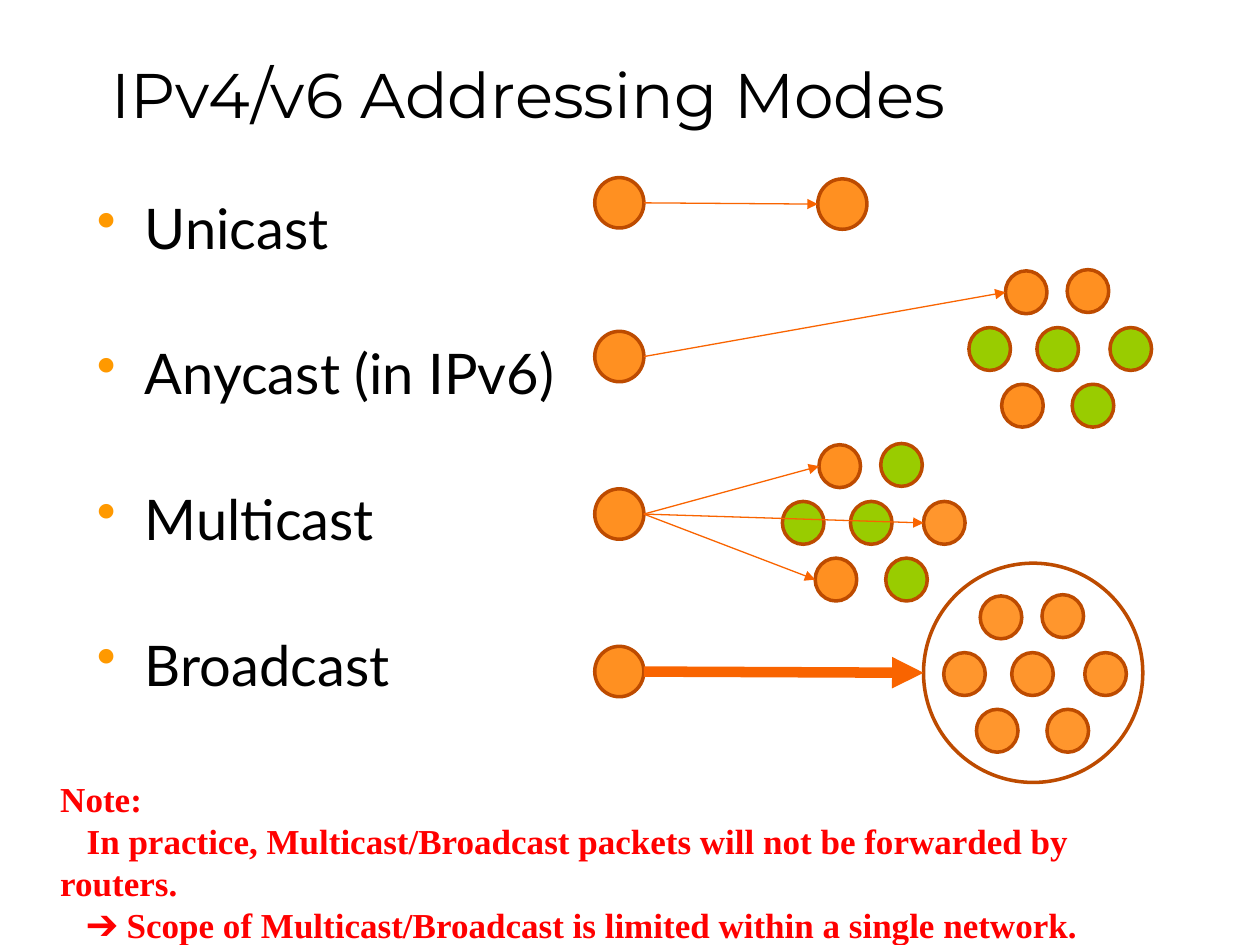
import pptx
import pptx.dml.color
import pptx.enum.shapes
import pptx.enum.text
import pptx.util
from lxml import etree
from pptx.oxml.ns import qn

PX = 9144
COLORS = {
    "text": "000000", "bullet": "FF9900", "note": "FF0000",
    "node": "FF9021", "member": "FF962D", "other": "99CC00",
    "outline": "BD4B00", "arrow": "F96400",
}
NODE_W, NODE_H = 39, 40
DOT_W, DOT_H = 33, 34
SOURCE_X = 472
CLUSTER = [(29, 1), (78, 0), (0, 46), (54, 46), (112, 46), (26, 91), (82, 91)]


def rgb(name):
    return pptx.dml.color.RGBColor.from_string(COLORS[name])


class Deck:
    def __init__(self, width, height):
        self.prs = pptx.Presentation()
        self.prs.slide_width = width * PX
        self.prs.slide_height = height * PX
        self.s = self.prs.slides.add_slide(self.prs.slide_layouts[6])

    def text(self, box, lines, font, size, color, bold=False):
        sp = self.s.shapes.add_textbox(*(v * PX for v in box))
        tf = sp.text_frame
        tf.word_wrap = True
        for i, line in enumerate(lines):
            p = tf.paragraphs[0] if i == 0 else tf.add_paragraph()
            p.text = line
            p.font.name = font
            p.font.size = pptx.util.Pt(size)
            p.font.bold = bold
            p.font.color.rgb = rgb(color)
        return tf

    def indent(self, p, left, first):
        pPr = p._p.get_or_add_pPr()
        pPr.set("marL", str(left * PX))
        pPr.set("indent", str(first * PX))
        return pPr

    def bullet(self, p, left, color):
        pPr = self.indent(p, left, -left)
        bu_clr = etree.Element(qn("a:buClr"))
        etree.SubElement(bu_clr, qn("a:srgbClr"), val=COLORS[color])
        bu_char = etree.Element(qn("a:buChar"), char="•")
        at = pPr.index(pPr.find(qn("a:defRPr")))
        pPr[at:at] = [bu_clr, bu_char]

    def circle(self, x, y, w, h, fill=None, parent=None):
        shapes = (parent or self.s).shapes
        sp = shapes.add_shape(pptx.enum.shapes.MSO_SHAPE.OVAL,
                              x * PX, y * PX, w * PX, h * PX)
        sp.shadow.inherit = False
        if fill:
            sp.fill.solid()
            sp.fill.fore_color.rgb = rgb(fill)
        else:
            sp.fill.background()
        sp.line.color.rgb = rgb("outline")
        sp.line.width = pptx.util.Pt(2)
        return sp

    def node(self, x, y):
        return self.circle(x, y, NODE_W, NODE_H, "node")

    def cluster(self, x, y, fills, parent=None):
        return [self.circle(x + dx, y + dy, DOT_W, DOT_H, fill, parent)
                for (dx, dy), fill in zip(CLUSTER, fills)]

    def arrow(self, start, end, width=0.75):
        c = self.s.shapes.add_connector(
            pptx.enum.shapes.MSO_CONNECTOR.STRAIGHT,
            start.left + start.width, start.top + start.height // 2,
            end.left, end.top + end.height // 2)
        c.line.color.rgb = rgb("arrow")
        c.line.width = pptx.util.Pt(width)
        etree.SubElement(c.line._get_or_add_ln(), qn("a:tailEnd"), type="triangle")
        etree.SubElement(c._element.spPr, qn("a:effectLst"))


def main():
    deck = Deck(1000, 750)

    title = deck.text((79, 0, 882, 109), ["IPv4/v6 Addressing Modes"],
                      "Montserrat", 36, "text")
    title.vertical_anchor = pptx.enum.text.MSO_ANCHOR.BOTTOM

    modes = deck.text((67, 95, 617, 467),
                      ["Unicast", "Anycast (in IPv6)", "Multicast", "Broadcast"],
                      "Lato", 32, "text")
    for p in modes.paragraphs:
        p.line_spacing = 2.0
        p.space_before = pptx.util.Pt(6.4)
        deck.bullet(p, 38, "bullet")

    unicast, anycast, multicast, broadcast = (
        deck.node(SOURCE_X, y) for y in (141, 263, 388, 513))
    receiver = deck.node(649, 142)
    any_dots = deck.cluster(769, 214, ["node"] * 2 + ["other"] * 3 + ["node", "other"])
    multi_dots = deck.cluster(621, 352, ["node", "other", "other", "other",
                                         "member", "node", "other"])
    group = deck.s.shapes.add_group_shape()
    deck.cluster(749, 472, ["member"] * len(CLUSTER), group)

    deck.arrow(unicast, receiver)
    deck.arrow(anycast, any_dots[0])
    for i in (0, 4, 5):
        deck.arrow(multicast, multi_dots[i])
    network = deck.circle(733, 447, 174, 174)
    deck.arrow(broadcast, network, 6)

    note = deck.text(
        (38, 612, 893, 111),
        ["Note:",
         "In practice, Multicast/Broadcast packets will not be forwarded by routers.",
         "➔ Scope of Multicast/Broadcast is limited within a single network."],
        "Times New Roman", 20, "note", bold=True)
    note.auto_size = pptx.enum.text.MSO_AUTO_SIZE.SHAPE_TO_FIT_TEXT
    for p in note.paragraphs[1:]:
        deck.indent(p, 0, 21)

    deck.prs.save("out.pptx")


if __name__ == "__main__":
    main()
